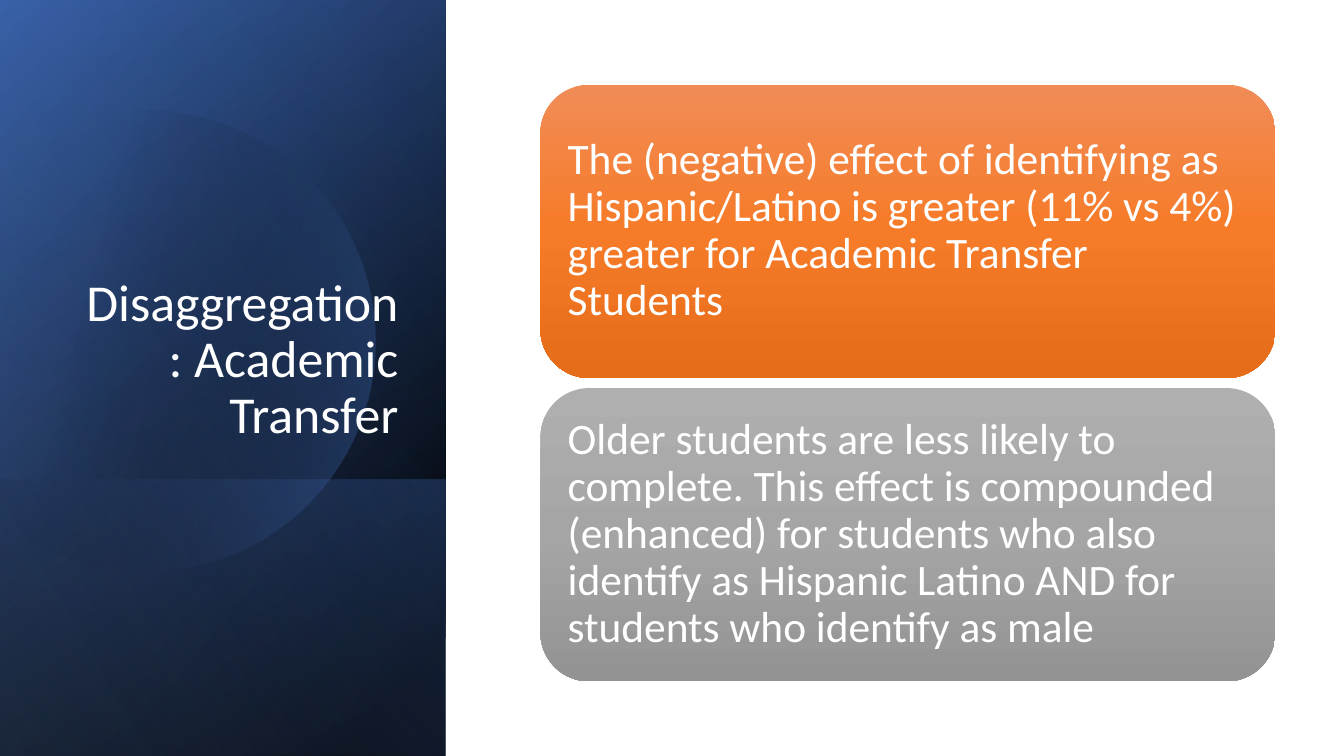
from dataclasses import dataclass
from lxml import etree
from pptx import Presentation
from pptx.dml.color import RGBColor
from pptx.enum.shapes import MSO_SHAPE
from pptx.enum.text import MSO_ANCHOR, PP_ALIGN
from pptx.oxml import parse_xml
from pptx.oxml.ns import nsdecls, qn
from pptx.util import Inches, Pt


@dataclass(frozen=True)
class Theme:
    font: str = "Calibri"
    title: int = 37
    body: int = 31
    white: str = "FFFFFF"
    black: str = "000000"
    navy: str = "2F5597"
    blue: str = "4472C4"
    pale: str = "8FAADC"
    orange: tuple = ("F18C57", "F67B28", "E56C19")
    gray: tuple = ("AFAFAF", "A5A5A5", "939393")


T = Theme()


def shade(shape, stops, angle):
    """Fill with a gradient; each stop is position, colour, opacity in percent."""
    shape.shadow.inherit = False
    shape.line.fill.background()
    shape.fill.gradient()
    old = shape._element.spPr.find(qn("a:gradFill"))
    fill = parse_xml(f'<a:gradFill rotWithShape="1" {nsdecls("a")}><a:gsLst/>'
                     f'<a:lin ang="{angle * 60000}" scaled="0"/></a:gradFill>')
    for place, color, alpha in stops:
        stop = etree.SubElement(fill[0], qn("a:gs"), pos=str(place * 1000))
        tint = etree.SubElement(stop, qn("a:srgbClr"), val=color)
        if alpha < 100:
            etree.SubElement(tint, qn("a:alpha"), val=str(alpha * 1000))
    old.getparent().replace(old, fill)


def turned(slide, box, stops, angle):
    """Draw a rectangle turned a quarter so that it covers the box."""
    x, y, w, h = box
    rect = slide.shapes.add_shape(
        MSO_SHAPE.RECTANGLE, Inches(x + (w - h) / 2), Inches(y + (h - w) / 2),
        Inches(h), Inches(w))
    rect.rotation = 90
    rect._element.spPr.xfrm.set("flipH", "1")
    shade(rect, stops, angle)


def curve(start, a, b, end, steps=24):
    """List points along a cubic curve."""
    points = []
    for i in range(1, steps + 1):
        t = i / steps
        mix = ((1 - t) ** 3, 3 * t * (1 - t) ** 2, 3 * t * t * (1 - t), t ** 3)
        points.append(tuple(sum(m * p[k] for m, p in zip(mix, (start, a, b, end)))
                            for k in (0, 1)))
    return points


def disc(slide, box):
    """Draw the glowing disc, cut off at the left."""
    x, y = box[:2]
    start = (1.49, 1.1)
    arcs = [((2.46, 1.12), (3.35, 1.77), (3.63, 2.75)),
            ((3.98, 3.97), (3.28, 5.23), (2.07, 5.58)),
            ((1.31, 5.8), (0.53, 5.61), (-0.03, 5.14)),
            ((-0.15, 5.03), (-0.15, 1.75), (0, 1.61)),
            ((0.23, 1.42), (0.5, 1.28), (0.8, 1.19)),
            ((1.03, 1.13), (1.26, 1.1), start)]
    points, last = [], start
    for a, b, end in arcs:
        points += [a, b, end] if a[0] == b[0] else curve(last, a, b, end)
        last = end
    path = slide.shapes.build_freeform(
        Inches(x + start[0]), Inches(y + start[1]), scale=1.0)
    path.add_line_segments([(Inches(x + px), Inches(y + py)) for px, py in points])
    shade(path.convert_to_shape(), [(29, T.black, 0), (100, T.blue, 43)], 14)


def write(slide, box, text, size, anchor, align, inset):
    x, y, w, h = box
    frame = slide.shapes.add_textbox(
        Inches(x), Inches(y), Inches(w), Inches(h)).text_frame
    frame.word_wrap = True
    frame.vertical_anchor = anchor
    frame.margin_left = frame.margin_right = Inches(inset[0])
    frame.margin_top = frame.margin_bottom = Inches(inset[1])
    frame.text = text
    para = frame.paragraphs[0]
    para.alignment = align
    para.line_spacing = 0.9
    font = para.runs[0].font
    font.name, font.size = T.font, Pt(size)
    font.color.rgb = RGBColor.from_string(T.white)


def panel(slide, box, title):
    x, y, w, h = box
    foot = 2.74
    # Layered shades
    turned(slide, box, [(8, T.black, 100), (100, T.navy, 100)], 50)
    turned(slide, box, [(0, T.black, 0), (99, T.blue, 46)], 30)
    turned(slide, (x, y + h - foot, w, foot),
           [(2, T.blue, 29), (100, T.black, 30)], 130)
    disc(slide, box)
    turned(slide, box, [(0, T.black, 0), (99, T.pale, 11)], 120)
    # Title
    write(slide, (x + 0.64, y + 1.84, 3.41, 2.62), title, T.title,
          MSO_ANCHOR.BOTTOM, PP_ALIGN.RIGHT, (0.1, 0.05))


def cards(slide, box, items, gap=0.1):
    x, y, w, h = box
    tall = (h - gap * (len(items) - 1)) / len(items)
    pad = 0.14
    for i, (text, colors) in enumerate(items):
        top = y + i * (tall + gap)
        card = slide.shapes.add_shape(
            MSO_SHAPE.ROUNDED_RECTANGLE, Inches(x), Inches(top),
            Inches(w), Inches(tall))
        shade(card, [(p, c, 100) for p, c in zip((0, 50, 100), colors)], 90)
        write(slide, (x + pad, top + pad, w - 2 * pad, tall - 2 * pad), text,
              T.body, MSO_ANCHOR.MIDDLE, PP_ALIGN.LEFT, (0.13, 0.13))


def main():
    deck = Presentation()
    deck.slide_width, deck.slide_height = Inches(13.33), Inches(7.5)
    slide = deck.slides.add_slide(deck.slide_layouts[6])
    panel(slide, (0, 0, 4.42, 7.5), "Disaggregation: Academic Transfer")
    cards(slide, (5.36, 0.84, 7.29, 5.92), [
        ("The (negative) effect of identifying as Hispanic/Latino is greater "
         "(11% vs 4%) greater for Academic Transfer Students", T.orange),
        ("Older students are less likely to complete. This effect is compounded "
         "(enhanced) for students who also identify as Hispanic Latino AND for "
         "students who identify as male", T.gray)])
    deck.save("out.pptx")


if __name__ == "__main__":
    main()
